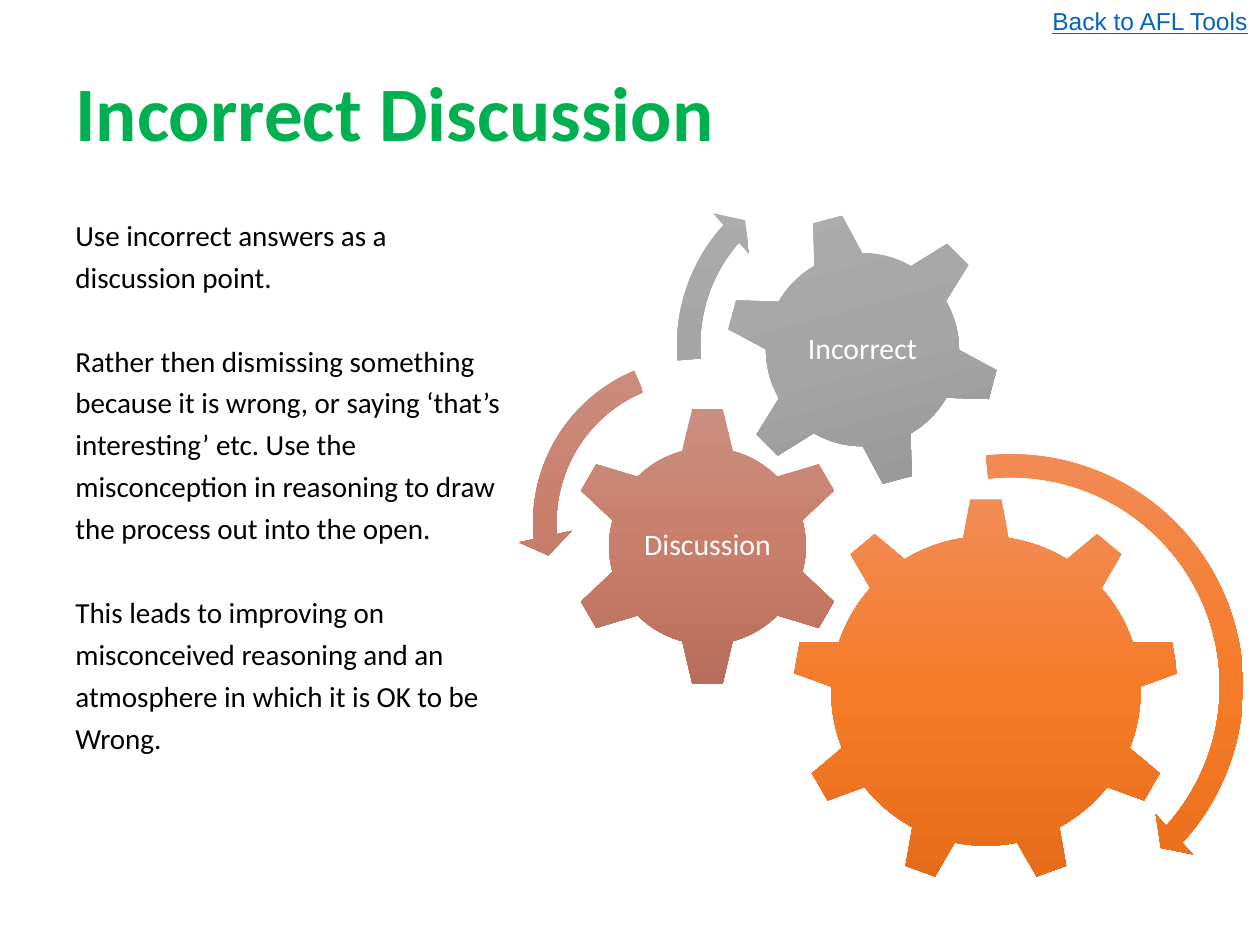
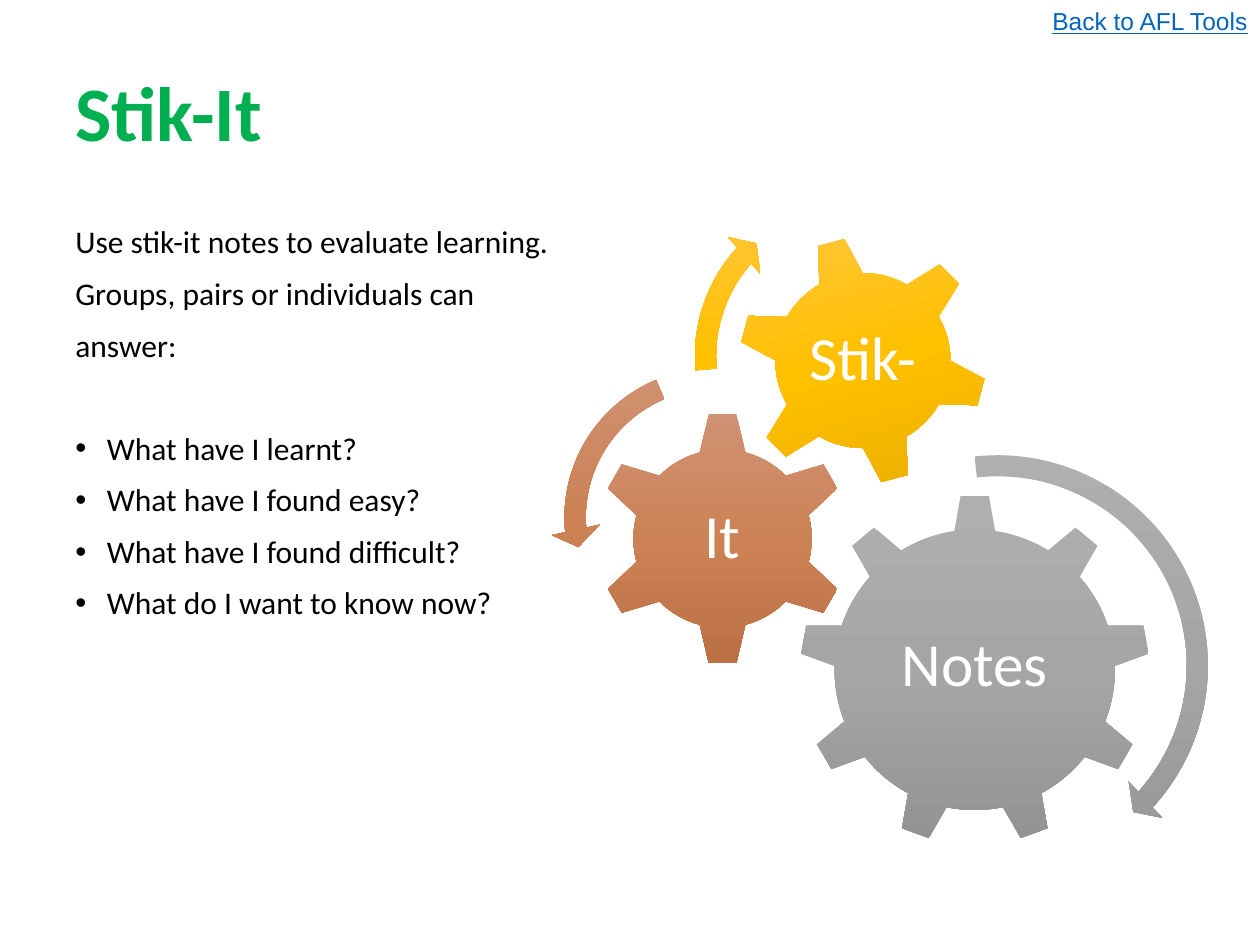
import copy
from dataclasses import dataclass

import lxml.etree
import pptx
import pptx.dml.color
import pptx.enum.shapes
import pptx.enum.text
import pptx.oxml.ns
import pptx.util

Pt = pptx.util.Pt
qn = pptx.oxml.ns.qn
RGB = pptx.dml.color.RGBColor.from_string
SHAPE = pptx.enum.shapes.MSO_SHAPE
ALIGN = pptx.enum.text.PP_ALIGN
ANCHOR = pptx.enum.text.MSO_ANCHOR


@dataclass(frozen=True)
class Theme:
    heading_font: str = "Calibri"
    link_font: str = "Arial"
    title_color: str = "00B050"
    body_color: str = "000000"
    link_color: str = "0563C1"
    label_color: str = "FFFFFF"
    title_size: float = 44
    link_size: float = 14
    orange: tuple = ("F18C57", "F67B28", "E56C19")
    rose: tuple = ("CB8F81", "C97E6B", "B76D5B")
    gray: tuple = ("AFAFAF", "A5A5A5", "939393")
    gold: tuple = ("FFC746", "FFC000", "E5AC00")
    copper: tuple = ("D09275", "CC8255", "BB7044")


theme = Theme()


def add_text(slide, box, groups, size, color, font=theme.heading_font, bold=False,
             underline=False, align=ALIGN.LEFT, anchor=ANCHOR.TOP, inset=(7.2, 3.6),
             line_spacing=0.9, space_before=0, group_gap=0, indent=0, bulleted_groups=()):
    """Add a text box; each group is a list of paragraphs, set off by group_gap."""
    shape = slide.shapes.add_textbox(*(Pt(length) for length in box))
    frame = shape.text_frame
    frame.word_wrap = True
    frame.vertical_anchor = anchor
    frame.margin_left = frame.margin_right = Pt(inset[0])
    frame.margin_top = frame.margin_bottom = Pt(inset[1])
    for group_index, group in enumerate(groups):
        for line_index, line in enumerate(group):
            first = group_index == line_index == 0
            paragraph = frame.paragraphs[0] if first else frame.add_paragraph()
            paragraph.alignment = align
            paragraph.line_spacing = line_spacing
            starts_group = group_index > 0 and line_index == 0
            paragraph.space_before = Pt(space_before + group_gap * starts_group)
            run = paragraph.add_run()
            run.text = line
            run.font.name, run.font.size = font, Pt(size)
            run.font.bold, run.font.underline = bold, underline
            run.font.color.rgb = RGB(color)
            if indent:
                properties = paragraph._p.get_or_add_pPr()
                properties.set("marL", str(Pt(indent)))
                properties.set("indent", str(-Pt(indent)))
                if group_index in bulleted_groups:
                    bullet_font = lxml.etree.SubElement(properties, qn("a:buFont"))
                    bullet_font.set("typeface", "Arial")
                    lxml.etree.SubElement(properties, qn("a:buChar")).set("char", "•")
                else:
                    lxml.etree.SubElement(properties, qn("a:buNone"))


def add_gradient_shape(slide, kind, box, colors, rotation=0, adjustments=()):
    """Add a borderless shape with a three-stop gradient running downwards."""
    shape = slide.shapes.add_shape(kind, *(Pt(length) for length in box))
    shape.shadow.inherit = False
    shape.line.fill.background()
    shape.rotation = rotation
    for index, value in enumerate(adjustments):
        shape.adjustments[index] = value
    shape.fill.gradient()
    shape.fill.gradient_angle = 270
    stop_list = shape._element.spPr.find(".//" + qn("a:gsLst"))
    stop_list.insert(1, copy.deepcopy(stop_list[0]))
    for stop, position, color in zip(shape.fill.gradient_stops, (0, 0.5, 1), colors):
        stop.position = position
        stop.color.rgb = RGB(color)


# Full-size gear train: kind, left, top, side, rotation, label width ratio, label lift
GEARS = [
    (SHAPE.GEAR_9, 452.9, 284.4, 221, 0, 0.6, 2),
    (SHAPE.GEAR_6, 324, 231.8, 160.6, 0, 0.5, 0),
    (SHAPE.GEAR_6, 414, 121, 157.7, 345, 0.56, 0),
]
# The arrow around each gear: kind, left, top, side, adjustments
ARROWS = [
    (SHAPE.CIRCULAR_ARROW, 436.3, 250.6, 283, (0.047, 2.99, 25.34, 158.23, 0.055)),
    (SHAPE.LEFT_CIRCULAR_ARROW, 295.9, 195.8, 205.9, (0.065, 4.3, 104.89, 148.38, 0.075)),
    (SHAPE.CIRCULAR_ARROW, 378, 86.4, 221.8, (0.06, 3.94, 133.14, 105.08, 0.07)),
]

SLIDES = [
    dict(
        title="Incorrect Discussion",
        body=[
            ["Use incorrect answers as a", "discussion point."],
            ["Rather then dismissing something", "because it is wrong, or saying ‘that’s",
             "interesting’ etc. Use the", "misconception in reasoning to draw",
             "the process out into the open."],
            ["This leads to improving on", "misconceived reasoning and an",
             "atmosphere in which it is OK to be", "Wrong."],
        ],
        body_format=dict(size=16.6, line_spacing=0.7, group_gap=24),
        gear_labels=["", "Discussion", "Incorrect"], label_size=17,
        gear_colors=[theme.orange, theme.rose, theme.gray],
        scale=1, offset=(0, 0),
    ),
    dict(
        title="Stik-It",
        body=[
            ["Use stik-it notes to evaluate learning.", "Groups, pairs or individuals can",
             "answer:"],
            ["What have I learnt?", "What have I found easy?",
             "What have I found difficult?", "What do I want to know now?"],
        ],
        body_format=dict(size=18, group_gap=29.5, bulleted_groups=(1,)),
        gear_labels=["Notes", "It", "Stik-"], label_size=35,
        gear_colors=[theme.gray, theme.copper, theme.gold],
        scale=0.906, offset=(46.6, 25),
    ),
]

presentation = pptx.Presentation()
presentation.slide_width, presentation.slide_height = Pt(720), Pt(540)

for content in SLIDES:
    slide = presentation.slides.add_slide(presentation.slide_layouts[6])
    add_text(slide, (36, 21.6, 648, 90), [[content["title"]]], theme.title_size,
             theme.title_color, bold=True, anchor=ANCHOR.MIDDLE)
    add_text(slide, (36, 126, 318.2, 356.4), content["body"], color=theme.body_color,
             space_before=10, indent=18, **content["body_format"])
    add_text(slide, (573.8, 0, 146.2, 24.5), [["Back to AFL Tools"]], theme.link_size,
             theme.link_color, font=theme.link_font, underline=True,
             align=ALIGN.RIGHT, line_spacing=1)

    scale = content["scale"]
    offset_x, offset_y = content["offset"]
    for gear, label, colors in zip(GEARS, content["gear_labels"], content["gear_colors"]):
        kind, left, top, side, rotation, label_ratio, lift = gear
        left, top, side = offset_x + left * scale, offset_y + top * scale, side * scale
        add_gradient_shape(slide, kind, (left, top, side, side), colors, rotation)
        if label:
            label_side = side * label_ratio
            margin = (side - label_side) / 2
            add_text(slide, (left + margin, top + margin - lift, label_side, label_side),
                     [[label]], content["label_size"], theme.label_color,
                     align=ALIGN.CENTER, anchor=ANCHOR.MIDDLE, inset=(0, 0))

    for (kind, left, top, side, adjustments), colors in zip(ARROWS, content["gear_colors"]):
        box = (offset_x + left * scale, offset_y + top * scale, side * scale, side * scale)
        add_gradient_shape(slide, kind, box, colors, adjustments=adjustments)

presentation.save("out.pptx")
